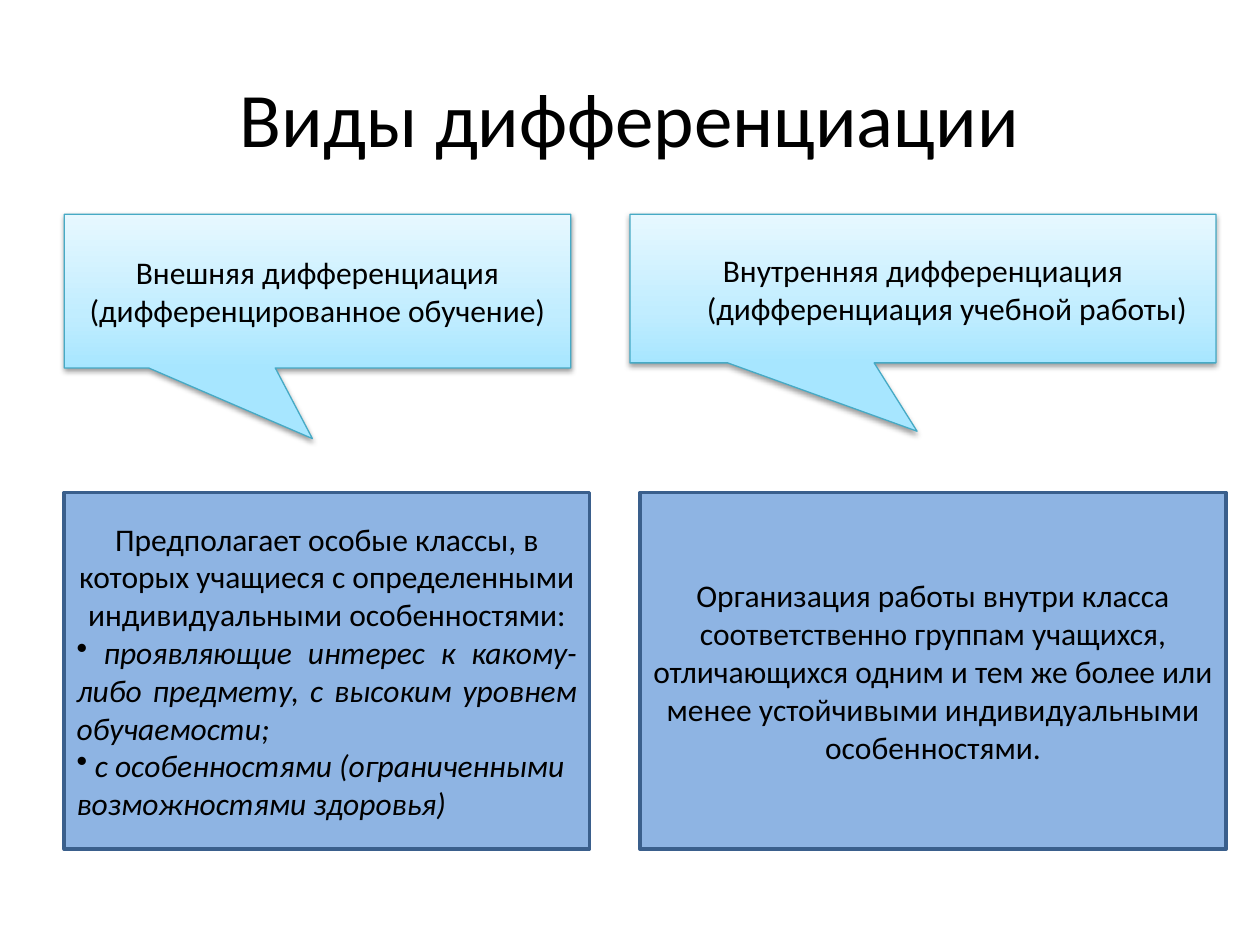
from copy import deepcopy

from lxml.etree import SubElement
from pptx import Presentation
from pptx.dml.color import RGBColor
from pptx.enum.shapes import MSO_SHAPE
from pptx.enum.text import MSO_ANCHOR, PP_ALIGN
from pptx.oxml.ns import qn
from pptx.util import Inches, Pt


def rgb(value):
    return RGBColor.from_string(value)


def set_gradient(fill, stops, angle):
    """Fill with (position, colour) stops; the angle runs counter-clockwise."""
    fill.gradient()
    fill.gradient_angle = angle
    gs_list = fill.gradient_stops[0]._gs.getparent()
    while len(gs_list) < len(stops):
        gs_list.append(deepcopy(gs_list[-1]))
    for stop, (position, color) in zip(fill.gradient_stops, stops):
        stop.position = position
        stop.color.rgb = rgb(color)


def add_shadow(sp, blur, distance, opacity):
    """Add a black shadow that falls straight down."""
    shadow = SubElement(sp._element.spPr.find(qn("a:effectLst")), qn("a:outerShdw"),
                        blurRad=str(Pt(blur)), dist=str(Pt(distance)),
                        dir="5400000", rotWithShape="0")
    color = SubElement(shadow, qn("a:srgbClr"), val="000000")
    SubElement(color, qn("a:alpha"), val=str(opacity * 1000))


def add_bullet(p):
    SubElement(p._p.get_or_add_pPr(), qn("a:buChar"), char="•")


def set_hanging(p, indent):
    pPr = p._p.get_or_add_pPr()
    pPr.set("marL", str(indent))
    pPr.set("indent", str(-indent))


class SlideBuilder:
    FONT = "Calibri"
    TEXT = "000000"
    BODY_SIZE = 18
    CALLOUT_STOPS = [(0, "A7E6FF"), (0.35, "C1EDFF"), (1, "E7F8FF")]
    CALLOUT_LINE = "46AAC5"
    BOX_FILL = "8EB4E3"
    BOX_LINE = "3A5F8C"

    def __init__(self, slide):
        self.slide = slide

    def set_text(self, sp, paragraphs, size=BODY_SIZE):
        """Set (text, alignment, is_bullet) paragraphs; bullets are italic."""
        tf = sp.text_frame
        tf.word_wrap = True
        tf.vertical_anchor = MSO_ANCHOR.MIDDLE
        for i, (text, align, is_bullet) in enumerate(paragraphs):
            p = tf.add_paragraph() if i else tf.paragraphs[0]
            p.text = text
            p.alignment = align
            if is_bullet:
                add_bullet(p)
                p.font.italic = True
            p.font.name = self.FONT
            p.font.size = Pt(size)
            p.font.color.rgb = rgb(self.TEXT)

    def shape(self, kind, left, top, width, height, line, line_width):
        sp = self.slide.shapes.add_shape(
            kind, Inches(left), Inches(top), Inches(width), Inches(height))
        sp.shadow.inherit = False
        sp.line.color.rgb = rgb(line)
        sp.line.width = Pt(line_width)
        return sp

    def title(self, text):
        sp = self.slide.shapes.add_textbox(
            Inches(0.5), Inches(0.3), Inches(9), Inches(1.25))
        self.set_text(sp, [(text, PP_ALIGN.CENTER, False)], size=44)

    def callout(self, left, width, height, text):
        sp = self.shape(MSO_SHAPE.RECTANGULAR_CALLOUT, left, 1.7, width, height,
                        self.CALLOUT_LINE, 0.75)
        sp.adjustments[0] = -0.01
        sp.adjustments[1] = 0.96
        set_gradient(sp.fill, self.CALLOUT_STOPS, 90)
        add_shadow(sp, blur=3.1, distance=1.6, opacity=38)
        self.set_text(sp, [(text, PP_ALIGN.CENTER, False)])
        return sp

    def box(self, left, width, paragraphs):
        sp = self.shape(MSO_SHAPE.RECTANGLE, left, 3.91, width, 2.83,
                        self.BOX_LINE, 2)
        sp.fill.solid()
        sp.fill.fore_color.rgb = rgb(self.BOX_FILL)
        self.set_text(sp, paragraphs)


def main():
    prs = Presentation()
    prs.slide_width = Inches(10)
    prs.slide_height = Inches(7.5)
    s = SlideBuilder(prs.slides.add_slide(prs.slide_layouts[6]))

    s.title("Виды дифференциации")
    s.callout(0.51, 4.02, 1.22,
              "Внешняя дифференциация (дифференцированное обучение)")
    inner = s.callout(5, 4.65, 1.18,
                      "Внутренняя дифференциация (дифференциация учебной работы)")
    p = inner.text_frame.paragraphs[0]
    set_hanging(p, Inches(0.38))
    p.space_before = Pt(3.6)

    s.box(0.51, 4.17, [
        ("Предполагает особые классы, в которых учащиеся с определенными "
         "индивидуальными особенностями:", PP_ALIGN.CENTER, False),
        (" проявляющие интерес к какому-либо предмету, с высоким уровнем "
         "обучаемости;", PP_ALIGN.JUSTIFY, True),
        (" с особенностями (ограниченными возможностями здоровья)",
         PP_ALIGN.LEFT, True),
    ])
    s.box(5.08, 4.65, [
        ("Организация работы внутри класса соответственно группам учащихся, "
         "отличающихся одним и тем же более или менее устойчивыми "
         "индивидуальными особенностями.", PP_ALIGN.CENTER, False),
    ])
    prs.save("out.pptx")


if __name__ == "__main__":
    main()
